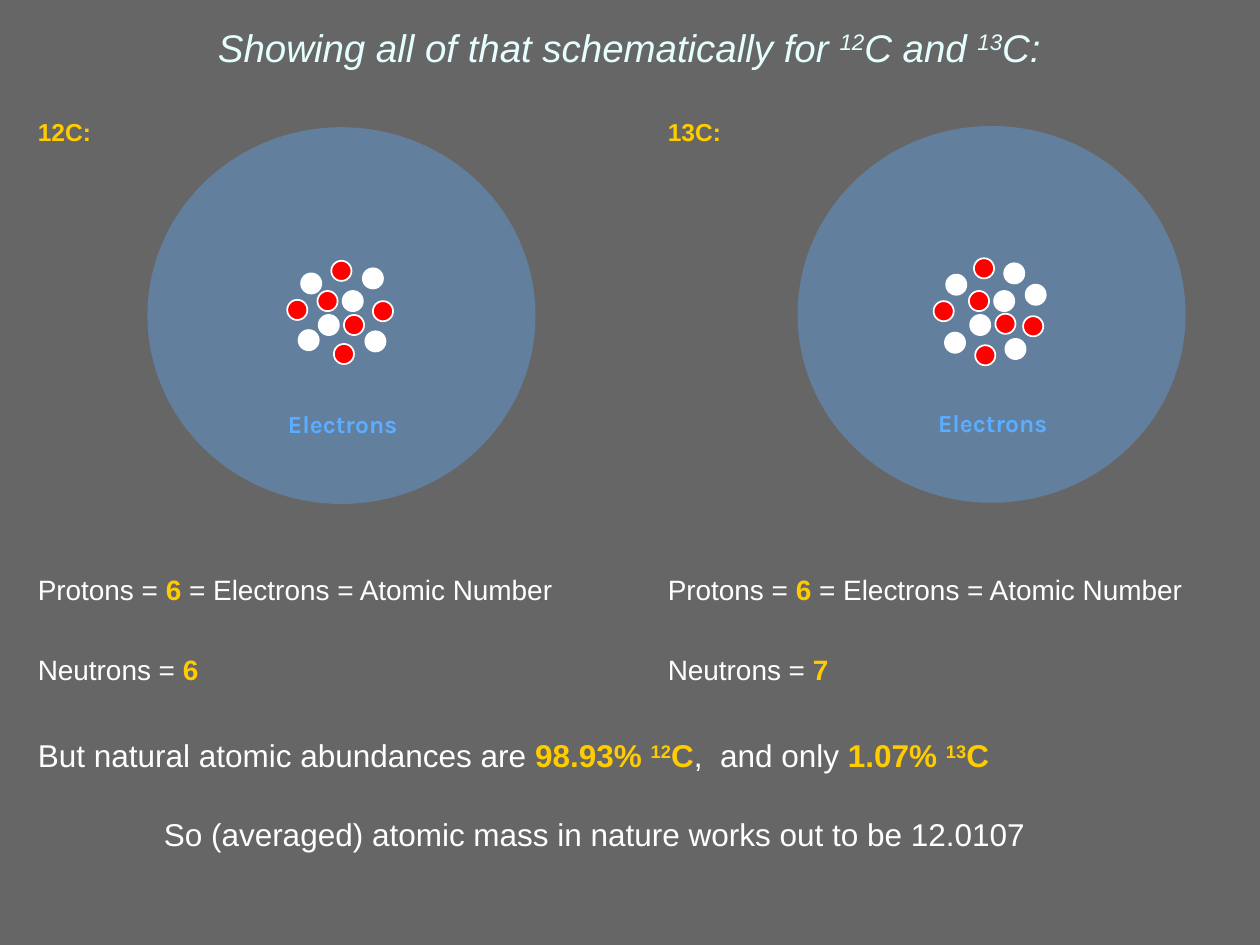
from dataclasses import dataclass
from lxml import etree
from pptx import Presentation
from pptx.dml.color import RGBColor
from pptx.enum.shapes import MSO_SHAPE
from pptx.enum.text import MSO_ANCHOR, PP_ALIGN
from pptx.oxml.ns import qn
from pptx.util import Inches, Pt

OVAL = MSO_SHAPE.OVAL
CENTER, LEFT = PP_ALIGN.CENTER, PP_ALIGN.LEFT
MIDDLE, TOP = MSO_ANCHOR.MIDDLE, MSO_ANCHOR.TOP
GRAY = RGBColor(0x66, 0x66, 0x66)
ICE = RGBColor(0xE5, 0xFF, 0xFF)
GOLD = RGBColor(0xFF, 0xCC, 0x00)
BLUE = RGBColor(0x5C, 0xAD, 0xFF)
RED = RGBColor(0xFF, 0x00, 0x00)
WHITE = RGBColor(0xFF, 0xFF, 0xFF)

CLOUD_WIDTH, CLOUD_HEIGHT, CLOUD_OPACITY = 3.08, 2.99, 36
NUCLEON_SIZE = 0.16
COLUMN_TAB = 5


@dataclass
class Span:
    text: str
    strong: bool = False
    raised: bool = False


@dataclass
class Line:
    spans: list[Span]
    size: int
    before: float = 0
    indent: float = 0


@dataclass
class Atom:
    left: float
    top: float
    protons: list[tuple[float, float]]
    neutrons: list[tuple[float, float]]


TITLE = [Span("Showing all of that schematically for "), Span("12", raised=True),
         Span("C and "), Span("13", raised=True), Span("C:")]

LINES = [
    Line([Span("12C:\t13C:", True)], 14),
    Line([Span("Protons ="), Span(" 6 ", True),
          Span("= Electrons = Atomic Number\tProtons = "), Span("6", True),
          Span(" = Electrons = Atomic Number")], 16, 243.5),
    Line([Span("Neutrons = "), Span("6", True),
          Span("\tNeutrons = "), Span("7", True)], 16, 26.5),
    Line([Span("But natural atomic abundances are "), Span("98.93% ", True),
          Span("12", True, True), Span("C", True), Span(",  and only "),
          Span("1.07% ", True), Span("13", True, True), Span("C", True)], 18, 28.5),
    Line([Span("So (averaged) atomic mass in nature works out to be 12.0107")],
         18, 23.5, 1),
]

ATOMS = [
    Atom(6.33, 1.00,
         [(7.69, 2.31), (7.90, 2.49), (7.41, 2.39), (8.12, 2.51), (7.74, 2.74),
          (7.73, 2.05)],
         [(7.89, 2.31), (7.70, 2.50), (7.51, 2.18), (7.97, 2.09), (7.50, 2.64),
          (7.98, 2.69), (8.14, 2.26)]),
    Atom(1.17, 1.01,
         [(2.52, 2.31), (2.73, 2.50), (2.28, 2.38), (2.96, 2.39), (2.65, 2.73),
          (2.63, 2.07)],
         [(2.72, 2.31), (2.53, 2.50), (2.39, 2.17), (2.88, 2.13), (2.37, 2.62),
          (2.90, 2.63)]),
]


def set_all(target, values: dict) -> None:
    for name, value in values.items():
        setattr(target, name, value)


def format_frame(frame, anchor, top_margin: float = 0.05) -> None:
    margin = Inches(0.05)
    set_all(frame, {"word_wrap": True, "vertical_anchor": anchor,
                    "margin_left": margin, "margin_right": margin,
                    "margin_top": Inches(top_margin), "margin_bottom": margin})


def add_span(para, span: Span, size: int, color: RGBColor, font: str = "Arial",
             italic: bool = False) -> None:
    run = para.add_run()
    run.text = span.text
    set_all(run.font, {"name": font, "size": Pt(size), "bold": span.strong,
                       "italic": italic})
    run.font.color.rgb = color
    if span.raised:
        run.font._element.set("baseline", "30000")


def add_column_tab(para) -> None:
    tabs = etree.SubElement(para._p.get_or_add_pPr(), qn("a:tabLst"))
    etree.SubElement(tabs, qn("a:tab"), pos=str(Inches(COLUMN_TAB)), algn="l")


def add_circle(shapes, left: float, top: float, width: float, height: float,
               color: RGBColor):
    circle = shapes.add_shape(OVAL, Inches(left), Inches(top),
                              Inches(width), Inches(height))
    circle.shadow.inherit = False
    circle.fill.solid()
    circle.fill.fore_color.rgb = color
    return circle


def add_atom(slide, atom: Atom) -> None:
    shapes = slide.shapes.add_group_shape().shapes
    # Translucent electron cloud
    cloud = add_circle(shapes, atom.left, atom.top, CLOUD_WIDTH, CLOUD_HEIGHT, BLUE)
    cloud.line.fill.background()
    color = cloud._element.spPr.find(f"{qn('a:solidFill')}/{qn('a:srgbClr')}")
    etree.SubElement(color, qn("a:alpha"), val=str(CLOUD_OPACITY * 1000))
    # Nucleus
    for places, fill in ((atom.neutrons, WHITE), (atom.protons, RED)):
        for left, top in places:
            nucleon = add_circle(shapes, left, top, NUCLEON_SIZE, NUCLEON_SIZE, fill)
            nucleon.line.color.rgb = WHITE
            nucleon.line.width = Pt(1)
    # Cloud label
    box = shapes.add_textbox(Inches(atom.left + 0.52), Inches(atom.top + 2.19),
                             Inches(2.06), Inches(0.34))
    format_frame(box.text_frame, TOP)
    para = box.text_frame.paragraphs[0]
    para.alignment = CENTER
    add_span(para, Span("Electrons", True), 14, BLUE, "Karla")


def add_title(slide) -> None:
    title = slide.shapes.title
    set_all(title, {"left": Inches(0.33), "top": Inches(0.08),
                    "width": Inches(9.33), "height": Inches(0.58)})
    format_frame(title.text_frame, MIDDLE)
    para = title.text_frame.paragraphs[0]
    para.alignment = CENTER
    for span in TITLE:
        add_span(para, span, 22, ICE, italic=True)


def add_facts(slide) -> None:
    box = slide.shapes.add_textbox(Inches(0.25), Inches(0.83),
                                   Inches(9.75), Inches(6.51))
    frame = box.text_frame
    format_frame(frame, TOP, 0.1)
    for index, line in enumerate(LINES):
        para = frame.add_paragraph() if index else frame.paragraphs[0]
        set_all(para, {"alignment": LEFT, "space_before": Pt(line.before)})
        if line.indent:
            para._p.get_or_add_pPr().set("marL", str(Inches(line.indent)))
        if any("\t" in span.text for span in line.spans):
            add_column_tab(para)
        for span in line.spans:
            add_span(para, span, line.size, GOLD if span.strong else WHITE)


def main() -> None:
    deck = Presentation()
    set_all(deck, {"slide_width": Inches(10), "slide_height": Inches(7.5)})
    page = deck.slides.add_slide(deck.slide_layouts.get_by_name("Title Only"))
    page.background.fill.solid()
    page.background.fill.fore_color.rgb = GRAY
    add_title(page)
    add_facts(page)
    for atom in ATOMS:
        add_atom(page, atom)
    deck.save("out.pptx")


if __name__ == "__main__":
    main()
